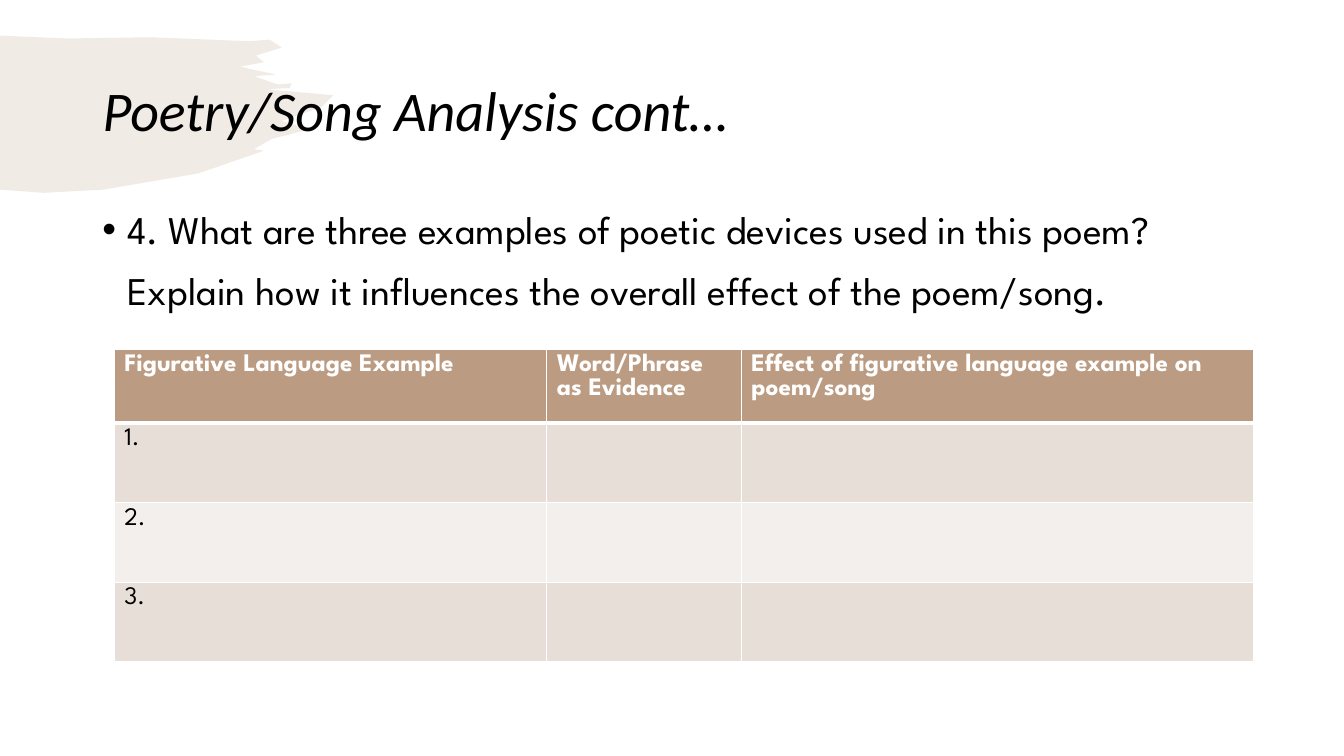
from lxml import etree
from pptx import Presentation
from pptx.dml.color import RGBColor
from pptx.enum.text import MSO_ANCHOR, PP_ALIGN
from pptx.oxml.ns import qn
from pptx.util import Cm, Pt

MIDDLE = MSO_ANCHOR.MIDDLE
TOP = MSO_ANCHOR.TOP
LEFT = PP_ALIGN.LEFT

BLACK = RGBColor(0x00, 0x00, 0x00)
WHITE = RGBColor(0xFF, 0xFF, 0xFF)
TAN = RGBColor(0xBB, 0x9B, 0x81)
BAND_DARK = RGBColor(0xE7, 0xDE, 0xD8)
BAND_LIGHT = RGBColor(0xF3, 0xEF, 0xED)

TITLE_FONT = "Calibri"
BODY_FONT = "League Spartan"

TITLE = "Poetry/Song Analysis cont…"
QUESTION = (
    "4. What are three examples of poetic devices used in this poem? "
    "Explain how it influences the overall effect of the poem/song."
)
TABLE_ROWS = [
    ("Figurative Language Example", "Word/Phrase as Evidence",
     "Effect of figurative language example on poem/song"),
    ("1.", "", ""),
    ("2.", "", ""),
    ("3.", "", ""),
]
COLUMN_WIDTHS = [10.9, 4.9, 12.9]
HEADER_HEIGHT = 1.85
ROW_HEIGHT = 2.01

BRUSH_OUTLINE = [
    (0, 0.9), (1.7, 0.97), (3.8, 0.94), (6.3, 1.04), (6.8, 1), (7.1, 1.2),
    (6.45, 1.4), (6.65, 1.57), (6.05, 1.68), (6.95, 1.88), (6.4, 1.92),
    (7, 2.13), (7.35, 2.1), (7.3, 2.22), (6.7, 2.25), (8.4, 2.4),
    (8.1, 2.7), (7.6, 2.87), (7.1, 3.05), (7.8, 3.26), (6.85, 3.5),
    (6.4, 3.76), (6.65, 3.8), (5, 4.37), (2.6, 4.78), (1.1, 4.86), (0, 4.78),
]


def add_run(paragraph, text, font_name, size, color, bold=False, italic=False):
    run = paragraph.add_run()
    run.text = text
    run.font.name = font_name
    run.font.size = Pt(size)
    run.font.color.rgb = color
    run.font.bold = bold
    run.font.italic = italic


def add_brush_stroke(slide):
    points = [(Cm(x), Cm(y)) for x, y in BRUSH_OUTLINE]
    builder = slide.shapes.build_freeform(*points[0])
    builder.add_line_segments(points[1:], close=True)
    brush = builder.convert_to_shape()
    brush.shadow.inherit = False
    brush.fill.solid()
    brush.fill.fore_color.rgb = TAN
    brush.line.fill.background()
    color = brush._element.spPr.find(qn("a:solidFill"))[0]
    etree.SubElement(color, qn("a:alpha"), val="20000")
    slide.shapes._spTree.insert(2, brush._element)


def add_title(slide):
    title = slide.shapes.title
    title.left, title.top, title.width, title.height = Cm(2.33), Cm(1.01), Cm(29.21), Cm(3.68)
    title.text_frame.vertical_anchor = MIDDLE
    paragraph = title.text_frame.paragraphs[0]
    paragraph.alignment = LEFT
    paragraph.line_spacing = 0.9
    add_run(paragraph, TITLE, TITLE_FONT, 40, BLACK, italic=True)


def add_question(slide):
    box = slide.shapes.add_textbox(Cm(2.33), Cm(4.7), Cm(29.21), Cm(12.45))
    box.text_frame.word_wrap = True
    box.text_frame.vertical_anchor = TOP
    paragraph = box.text_frame.paragraphs[0]
    paragraph.space_before = Pt(10)
    paragraph.line_spacing = 1.3
    properties = paragraph._p.get_or_add_pPr()
    properties.set("marL", str(Cm(0.63)))
    properties.set("indent", str(Cm(-0.63)))
    etree.SubElement(properties, qn("a:buFont"), typeface="Arial")
    etree.SubElement(properties, qn("a:buChar"), char="•")
    add_run(paragraph, QUESTION, BODY_FONT, 28, BLACK)


def set_borders(cell, row_index):
    widths = {"L": 1, "R": 1, "T": 3 if row_index == 1 else 1, "B": 3 if row_index == 0 else 1}
    properties = cell._tc.get_or_add_tcPr()
    for position, (side, width) in enumerate(widths.items()):
        line = etree.Element(qn(f"a:ln{side}"), w=str(Pt(width)))
        fill = etree.SubElement(line, qn("a:solidFill"))
        etree.SubElement(fill, qn("a:srgbClr"), val=str(WHITE))
        properties.insert(position, line)


def add_device_table(slide):
    row_heights = [HEADER_HEIGHT] + [ROW_HEIGHT] * (len(TABLE_ROWS) - 1)
    frame = slide.shapes.add_table(len(TABLE_ROWS), len(COLUMN_WIDTHS), Cm(2.88), Cm(8.8),
                                   Cm(sum(COLUMN_WIDTHS)), Cm(sum(row_heights)))
    table = frame.table
    for column, width in zip(table.columns, COLUMN_WIDTHS):
        column.width = Cm(width)
    for row_index, texts in enumerate(TABLE_ROWS):
        table.rows[row_index].height = Cm(row_heights[row_index])
        header = row_index == 0
        band = TAN if header else BAND_DARK if row_index % 2 else BAND_LIGHT
        for column_index, text in enumerate(texts):
            cell = table.cell(row_index, column_index)
            cell.fill.solid()
            cell.fill.fore_color.rgb = band
            set_borders(cell, row_index)
            if text:
                add_run(cell.text_frame.paragraphs[0], text, BODY_FONT, 18,
                        WHITE if header else BLACK, bold=header)


def main():
    presentation = Presentation()
    presentation.slide_width, presentation.slide_height = Cm(33.87), Cm(19.05)
    slide = presentation.slides.add_slide(presentation.slide_layouts[5])
    add_brush_stroke(slide)
    add_title(slide)
    add_question(slide)
    add_device_table(slide)
    presentation.save("out.pptx")


if __name__ == "__main__":
    main()
